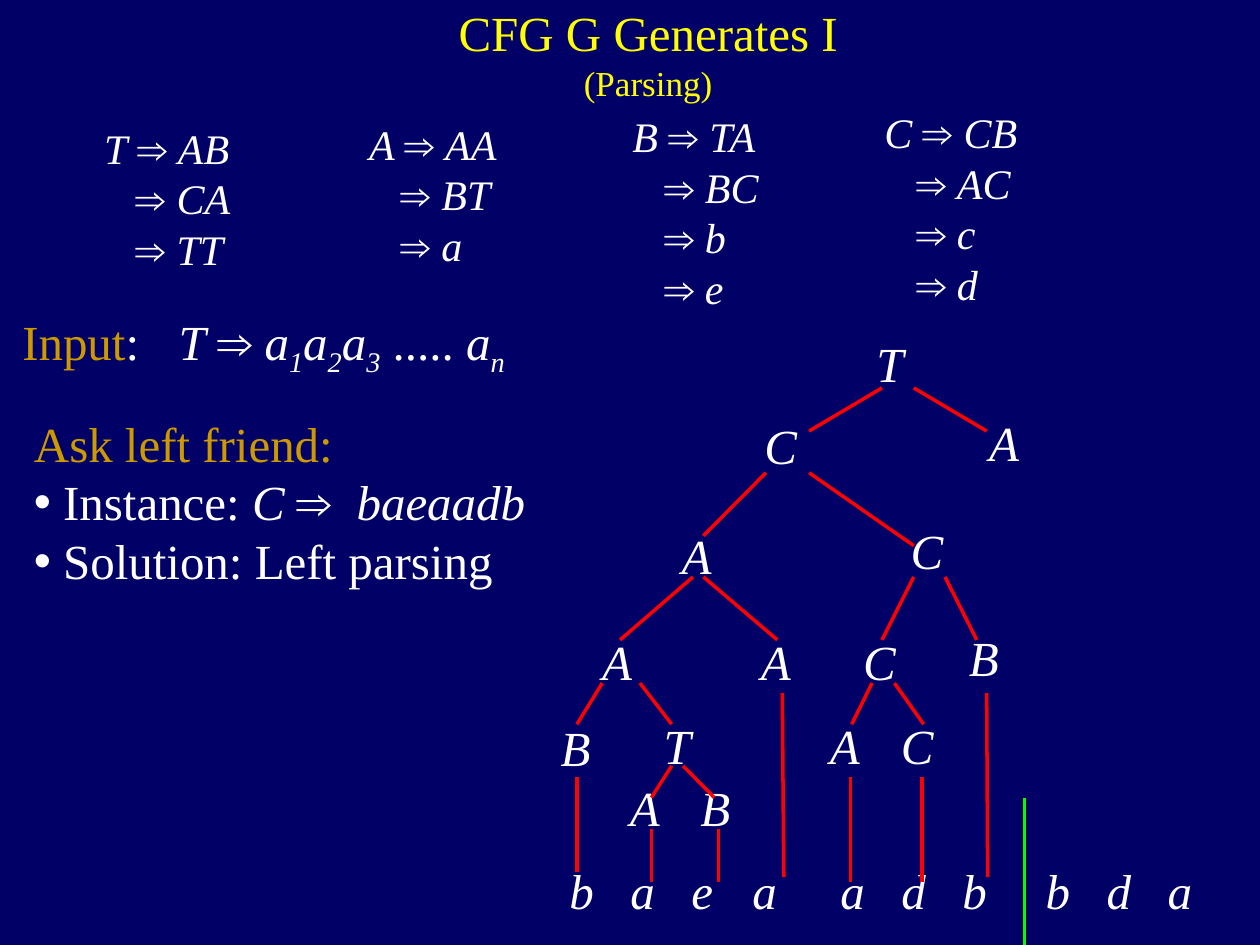
from pptx import Presentation
from pptx.dml.color import RGBColor as Rgb
from pptx.enum.shapes import MSO_CONNECTOR as Conn
from pptx.enum.text import MSO_ANCHOR as Anchor, MSO_AUTO_SIZE as Auto, PP_ALIGN as Align
from pptx.oxml.ns import qn
from pptx.util import Cm, Pt
from lxml.etree import SubElement

INK = {"back": "000066", "text": "FFFFFF", "title": "FFFF00",
       "gold": "CC9900", "edge": "FF0000", "split": "00FF00"}
FONT = "Times New Roman"

# Style letters of a run: i italic, s subscript, g gold, t title colour
TITLE = [[("CFG G Generates I", "t")], [("(Parsing)", "t")]]
ASK = [
    [("Ask left friend:", "g")],
    [("Instance: ", ""), ("C ", "i"), ("⇒  ", ""), ("baeaadb", "i")],
    [("Solution: Left parsing", "")],
]
INPUT = [("Input", "g"), (":", "")]
GOAL = [("T ", "i"), ("⇒ ", ""), ("a", "i"), ("1", "is"), ("a", "i"), ("2", "is"),
        ("a", "i"), ("3", "is"), (" ..... ", ""), ("a", "i"), ("n", "is")]

# Grammar: left, top, head, products
RULES = [
    (1.85, 2.34, "T", ["AB", "CA", "TT"]),
    (7.19, 2.26, "A", ["AA", "BT", "a"]),
    (12.5, 2.11, "B", ["TA", "BC", "b", "e"]),
    (17.58, 2.03, "C", ["CB", "AC", "c", "d"]),
]

# Parse tree: label, left, top
NODES = [
    ("T", 17.42, 6.6), ("C", 15.16, 8.26), ("A", 19.69, 8.2),
    ("A", 13.49, 10.46), ("C", 18.11, 10.36),
    ("A", 11.89, 12.6), ("A", 15.09, 12.6), ("C", 17.15, 12.6), ("B", 19.28, 12.52),
    ("B", 11.05, 14.33), ("T", 13.13, 14.3), ("A", 16.48, 14.3), ("C", 17.91, 14.3),
    ("A", 12.45, 15.54), ("B", 13.87, 15.54),
]
# Edges of one level: top, bottom, (x at top, x at bottom)
EDGES = [
    (7.82, 8.69, [(17.78, 16.31), (18.42, 19.89)]),
    (9.53, 10.8, [(15.44, 14.18)]),
    (9.53, 11, [(16.31, 18.42)]),
    (11.63, 12.9, [(13.97, 12.5), (14.18, 15.67), (18.42, 17.78), (19.05, 19.69)]),
    (13.77, 14.6, [(12.14, 11.63), (12.9, 13.54), (17.58, 17.17), (18.03, 18.62)]),
    (15.44, 16.08, [(13.54, 13.13), (13.77, 14.4)]),
    (15.67, 17.57, [(11.63, 11.63)]),
    (15.67, 17.78, [(17.15, 17.15), (18.59, 18.59)]),
    (16.71, 17.78, [(13.13, 13.13), (14.48, 14.48)]),
    (13.97, 17.68, [(15.77, 15.8), (19.89, 19.91)]),
]
LEAVES = [(11.23, "baea"), (16.69, "adb"), (20.83, "bda")]
LEAF_TOP, LEAF_GAP = 17.22, 1.23


def add_runs(para, runs, size):
    for text, style in runs:
        run = para.add_run()
        run.text = text
        font = run.font
        font.name, font.size, font.italic = FONT, Pt(size), "i" in style
        ink = "gold" if "g" in style else "title" if "t" in style else "text"
        font.color.rgb = Rgb.from_string(INK[ink])
        if "s" in style:
            run._r.get_or_add_rPr().set("baseline", "-25000")


def fill_frame(shape, paras, sizes):
    """Write paragraphs of runs, each with its own size, and return them."""
    frame = shape.text_frame
    frame.auto_size, frame.word_wrap = Auto.NONE, True
    frame.vertical_anchor = Anchor.TOP
    for num, (runs, size) in enumerate(zip(paras, sizes)):
        para = frame.add_paragraph() if num else frame.paragraphs[0]
        para.space_before = Pt(0)
        add_runs(para, runs, size)
    return frame.paragraphs


def add_text(slide, left, top, wide, high, paras, size=28):
    box = slide.shapes.add_textbox(Cm(left), Cm(top), Cm(wide), Cm(high))
    return fill_frame(box, paras, [size] * len(paras))


def place(shape, left, top, wide, high):
    shape.left, shape.top, shape.width, shape.height = map(Cm, (left, top, wide, high))


def indent(para, left, first=0.0):
    props = para._p.get_or_add_pPr()
    props.set("marL", str(Cm(left)))
    props.set("indent", str(Cm(first)))
    return props


def add_line(slide, x1, y1, x2, y2, ink):
    line = slide.shapes.add_connector(Conn.STRAIGHT, Cm(x1), Cm(y1), Cm(x2), Cm(y2))
    line.line.color.rgb = Rgb.from_string(INK[ink])
    line.line.width = Pt(2)
    SubElement(line._element.spPr, qn("a:effectLst"))


def add_rule(slide, left, top, head, products):
    paras = [[("⇒ ", ""), (item, "i")] for item in products]
    paras[0].insert(0, (head + " ", "i"))
    high = 0.25 + 1.02 * len(paras)
    for para in add_text(slide, left, top, 5.28, high, paras, 24)[1:]:
        indent(para, 0.64)


def add_leaves(slide, left, word):
    wide = LEAF_GAP * len(word) + 0.3
    para, = add_text(slide, left, LEAF_TOP, wide, 1.6, [[("\t".join(word), "i")]])
    tabs = SubElement(para._p.get_or_add_pPr(), qn("a:tabLst"))
    for num in range(1, len(word)):
        SubElement(tabs, qn("a:tab"), pos=str(Cm(num * LEAF_GAP)), algn="l")


def main():
    deck = Presentation()
    deck.slide_width, deck.slide_height = Cm(25.4), Cm(19.05)
    slide = deck.slides.add_slide(deck.slide_layouts[1])
    slide.background.fill.solid()
    slide.background.fill.fore_color.rgb = Rgb.from_string(INK["back"])

    title, body = slide.placeholders
    place(title, 8.43, -0.08, 9.27, 2.31)
    for para in fill_frame(title, TITLE, (28, 20)):
        para.alignment = Align.CENTER
    place(body, 0.43, 8.2, 11.89, 4.32)
    first, *items = fill_frame(body, ASK, [28] * len(ASK))
    SubElement(indent(first, 0), qn("a:buNone"))
    for para in items:
        indent(para, 0.59, -0.59)

    for rule in RULES:
        add_rule(slide, *rule)
    add_text(slide, 0.2, 6.15, 3.48, 1.6, [INPUT])
    add_text(slide, 3.35, 6.15, 9.09, 1.6, [GOAL])

    for label, left, top in NODES:
        add_text(slide, left, top, 1.27, 1.6, [[(label, "i")]])
    for leaf in LEAVES:
        add_leaves(slide, *leaf)
    for top, low, pairs in EDGES:
        for x1, x2 in pairs:
            add_line(slide, x1, top, x2, low, "edge")
    add_line(slide, 20.65, 19.05, 20.65, 16.08, "split")

    deck.save("out.pptx")


if __name__ == "__main__":
    main()
